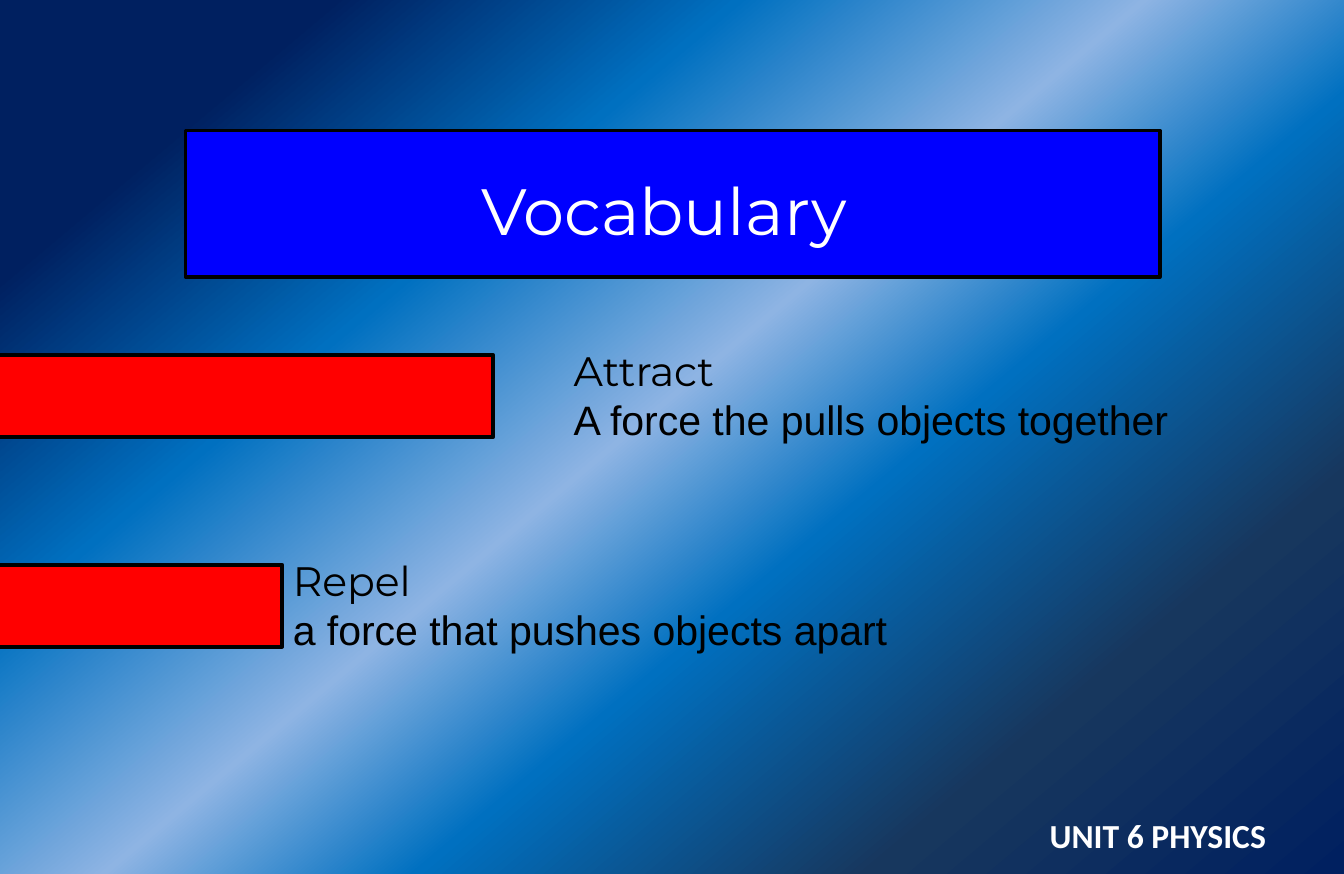
import lxml.etree
import pptx
import pptx.dml.color
import pptx.enum.shapes
import pptx.enum.text
import pptx.oxml.ns
import pptx.util

WIDTH, HEIGHT = 10, 6.5
COLORS = {
    "navy": "002060",
    "slate": "17375E",
    "azure": "0070C0",
    "sky": "8EB4E3",
    "blue": "0000FF",
    "red": "FF0000",
    "black": "000000",
    "white": "FFFFFF",
}
BACKDROP = [(0, "navy"), (20, "slate"), (39, "azure"), (52, "sky"),
            (69, "azure"), (86, "navy"), (98, "navy")]
BAR_LEFT, BAR_HEIGHT = -0.025, 0.61 / HEIGHT
TERM_HEIGHT, TERM_RISE = 0.84 / HEIGHT, 0.12 / HEIGHT
TERMS = [
    ("Attract", "A force the pulls objects together", 0.417, 0.477, 0.392, 2.64 / HEIGHT),
    ("Repel", "a force that pushes objects apart", 0.208, 0.468, 0.235, 4.2 / HEIGHT),
]


def color(name):
    """Return the named colour."""
    return pptx.dml.color.RGBColor.from_string(COLORS[name])


def place(left, top, width, height):
    """Turn shares of the slide's size into lengths."""
    return [pptx.util.Inches(round(share * side, 2))
            for share, side in zip((left, top, width, height), (WIDTH, HEIGHT) * 2)]


def paint_background(page, stops, angle):
    """Fill the page with a linear gradient of several stops."""
    fill = page.background.fill
    fill.gradient()
    fill.gradient_angle = 360 - angle
    qn = pptx.oxml.ns.qn
    stop_list = page.element.find(".//" + qn("a:gsLst"))
    for stop in list(stop_list):
        stop_list.remove(stop)
    for percent, name in stops:
        stop = lxml.etree.SubElement(stop_list, qn("a:gs"), pos=str(percent * 1000))
        lxml.etree.SubElement(stop, qn("a:srgbClr"), val=COLORS[name])


def add_bar(page, spot, fill):
    """Add an outlined rectangle."""
    bar = page.shapes.add_shape(pptx.enum.shapes.MSO_SHAPE.RECTANGLE, *place(*spot))
    bar.shadow.inherit = False
    bar.fill.solid()
    bar.fill.fore_color.rgb = color(fill)
    bar.line.color.rgb = color("black")
    bar.line.width = pptx.util.Pt(2)
    return bar


def add_box(page, spot, wrap=True):
    """Add a text box."""
    box = page.shapes.add_textbox(*place(*spot))
    box.text_frame.word_wrap = wrap
    return box


def write(para, text, font, size, ink="black", bold=False):
    """Add a formatted span to a paragraph."""
    span = para.add_run()
    span.text = text
    span.font.name = font
    span.font.size = pptx.util.Pt(size)
    span.font.bold = bold
    span.font.color.rgb = color(ink)


def add_title(page):
    """Add the title banner."""
    banner = add_bar(page, (0.138, 0.97 / HEIGHT, 0.725, 1.09 / HEIGHT), "blue")
    banner.text_frame.vertical_anchor = pptx.enum.text.MSO_ANCHOR.MIDDLE
    para = banner.text_frame.paragraphs[0]
    para.alignment = pptx.enum.text.PP_ALIGN.CENTER
    para.line_spacing = 1.15
    para.space_after = pptx.util.Pt(8.1)
    write(para, "Vocabulary ", "Montserrat", 35, "white")


def add_unit(page):
    """Add the unit label at the lower right."""
    frame = add_box(page, (0.717, 6.02 / HEIGHT, 0.233, 0.35 / HEIGHT)).text_frame
    frame.margin_left = frame.margin_right = pptx.util.Inches(0.08)
    frame.margin_top = frame.margin_bottom = pptx.util.Inches(0.04)
    para = frame.paragraphs[0]
    para.alignment = pptx.enum.text.PP_ALIGN.RIGHT
    write(para, "UNIT 6 PHYSICS", "Calibri", 18, "white", bold=True)


def add_term(page, term, meaning, left, top, width):
    """Add a vocabulary term with its meaning."""
    box = add_box(page, (left, top, width, TERM_HEIGHT), wrap=False)
    box.text_frame.auto_size = pptx.enum.text.MSO_AUTO_SIZE.SHAPE_TO_FIT_TEXT
    para = box.text_frame.paragraphs[0]
    write(para, term, "Montserrat", 22)
    para.add_line_break()
    write(para, meaning, "Arial", 22)


def main():
    """Build the vocabulary slide."""
    deck = pptx.Presentation()
    deck.slide_width = pptx.util.Inches(WIDTH)
    deck.slide_height = pptx.util.Inches(HEIGHT)
    page = deck.slides.add_slide(deck.slide_layouts[6])
    paint_background(page, BACKDROP, 230)
    add_title(page)
    add_unit(page)
    for term, meaning, left, width, _, top in TERMS:
        add_term(page, term, meaning, left, top - TERM_RISE, width)
    for *_, length, top in TERMS:
        add_bar(page, (BAR_LEFT, top, length, BAR_HEIGHT), "red")
    deck.save("out.pptx")


if __name__ == "__main__":
    main()
